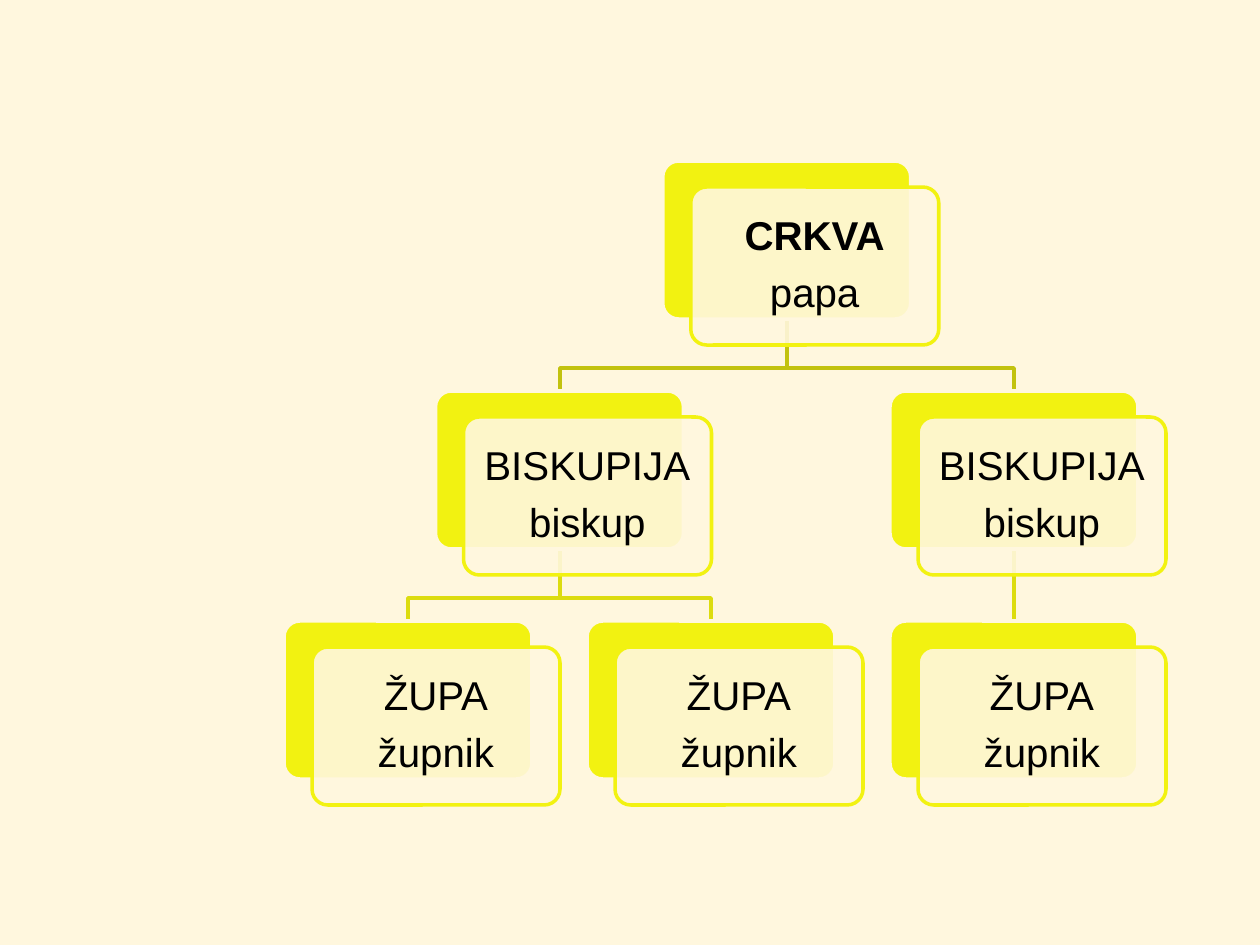
from lxml import etree
from pptx import Presentation
from pptx import util as u
from pptx.dml.color import RGBColor
from pptx.enum import shapes, text
from pptx.oxml.ns import qn

PX = 914400 / 126
CREAM = RGBColor(0xFF, 0xF7, 0xDE)
YELLOW = RGBColor(0xF2, 0xF2, 0x11)
BLACK = RGBColor(0, 0, 0)
LINK_COLORS = [RGBColor(0xC2, 0xC2, 0x0E), RGBColor(0xDC, 0xDC, 0x0F)]

CARD_W, CARD_H = 248, 158
FRONT_DX, FRONT_DY = 28, 26
COLUMN_STEP, LEVEL_STEP = 303, 230
BEND_RISE = 23

PARISH = ("ŽUPA", "župnik", [])
CHURCH = ("CRKVA", "papa", [
    ("BISKUPIJA", "biskup", [PARISH, PARISH]),
    ("BISKUPIJA", "biskup", [PARISH]),
])


def px(length):
    return u.Emu(round(length * PX))


def place(node, left, top, depth=0):
    """Return the placed node and the number of leaf columns it spans."""
    title, leader, children = node
    placed, columns = [], 0
    for child in children:
        branch, span = place(child, left + columns * COLUMN_STEP,
                             top + LEVEL_STEP, depth + 1)
        placed.append(branch)
        columns += span
    if placed:
        left = (placed[0]["left"] + placed[-1]["left"]) / 2
    return dict(title=title, leader=leader, left=left, top=top,
                depth=depth, children=placed), max(columns, 1)


def style_link(link, depth):
    link.line.color.rgb = LINK_COLORS[depth]
    link.line.width = u.Pt(2)


def add_elbow(slide, parent, child):
    start_x = parent["left"] + CARD_W / 2
    end_x = child["left"] + CARD_W / 2
    bend_y = child["top"] - BEND_RISE
    builder = slide.shapes.build_freeform(start_x, parent["top"] + CARD_H, scale=PX)
    builder.add_line_segments(
        [(start_x, bend_y), (end_x, bend_y), (end_x, child["top"])], close=False)
    elbow = builder.convert_to_shape()
    elbow.shadow.inherit = False
    elbow.fill.background()
    style_link(elbow, parent["depth"])


def add_straight_link(slide, parent, child, parent_card, child_card):
    """Join two cards of one column, behind all cards."""
    x = px(parent["left"] + CARD_W / 2)
    link = slide.shapes.add_connector(
        shapes.MSO_CONNECTOR.STRAIGHT, x, px(parent["top"] + CARD_H), x, px(child["top"]))
    link.begin_connect(parent_card, 2)
    link.end_connect(child_card, 0)
    style_link(link, parent["depth"])
    etree.SubElement(link._element.spPr, qn("a:effectLst"))
    slide.shapes._spTree.insert(2, link._element)


def add_card(slide, left, top, fill, line):
    card = slide.shapes.add_shape(shapes.MSO_SHAPE.ROUNDED_RECTANGLE,
                                  px(left), px(top), px(CARD_W), px(CARD_H))
    card.adjustments[0] = 0.1
    card.shadow.inherit = False
    card.fill.solid()
    card.fill.fore_color.rgb = fill
    card.line.color.rgb = line
    card.line.width = u.Pt(2)
    return card


def write_label(card, title, leader, bold_title):
    frame = card.text_frame
    frame.word_wrap = True
    frame.vertical_anchor = text.MSO_ANCHOR.MIDDLE
    frame.margin_left = frame.margin_right = px(11)
    frame.margin_top = frame.margin_bottom = px(11)
    frame.text = f"{title}\n{leader}"
    for paragraph in frame.paragraphs:
        paragraph.alignment = text.PP_ALIGN.CENTER
        paragraph.line_spacing = 0.9
        paragraph.space_after = u.Pt(8)
        font = paragraph.runs[0].font
        font.name, font.size, font.bold = "Arial", u.Pt(23), False
        font.color.rgb = BLACK
    frame.paragraphs[0].runs[0].font.bold = bold_title


def add_unit(slide, node):
    """Draw a solid card with a translucent labelled card over it."""
    back = add_card(slide, node["left"], node["top"], YELLOW, CREAM)
    front = add_card(slide, node["left"] + FRONT_DX, node["top"] + FRONT_DY, CREAM, YELLOW)
    tint = front._element.spPr.find(qn("a:solidFill"))[0]
    etree.SubElement(tint, qn("a:alpha"), val="90000")
    write_label(front, node["title"], node["leader"], node["depth"] == 0)
    return back


def add_elbows(slide, node):
    for child in node["children"]:
        if child["left"] != node["left"]:
            add_elbow(slide, node, child)
        add_elbows(slide, child)


def add_units(slide, node):
    card = add_unit(slide, node)
    for child in node["children"]:
        child_card = add_units(slide, child)
        if child["left"] == node["left"]:
            add_straight_link(slide, node, child, card, child_card)
    return card


def add_hierarchy(slide, left, top):
    root, _ = place(CHURCH, left, top)
    add_elbows(slide, root)
    add_units(slide, root)


def main():
    deck = Presentation()
    deck.slide_width, deck.slide_height = px(1260), px(945)
    slide = deck.slides.add_slide(deck.slide_layouts[6])
    slide.background.fill.solid()
    slide.background.fill.fore_color.rgb = CREAM
    add_hierarchy(slide, 284, 161)
    deck.save("out.pptx")


if __name__ == "__main__":
    main()
